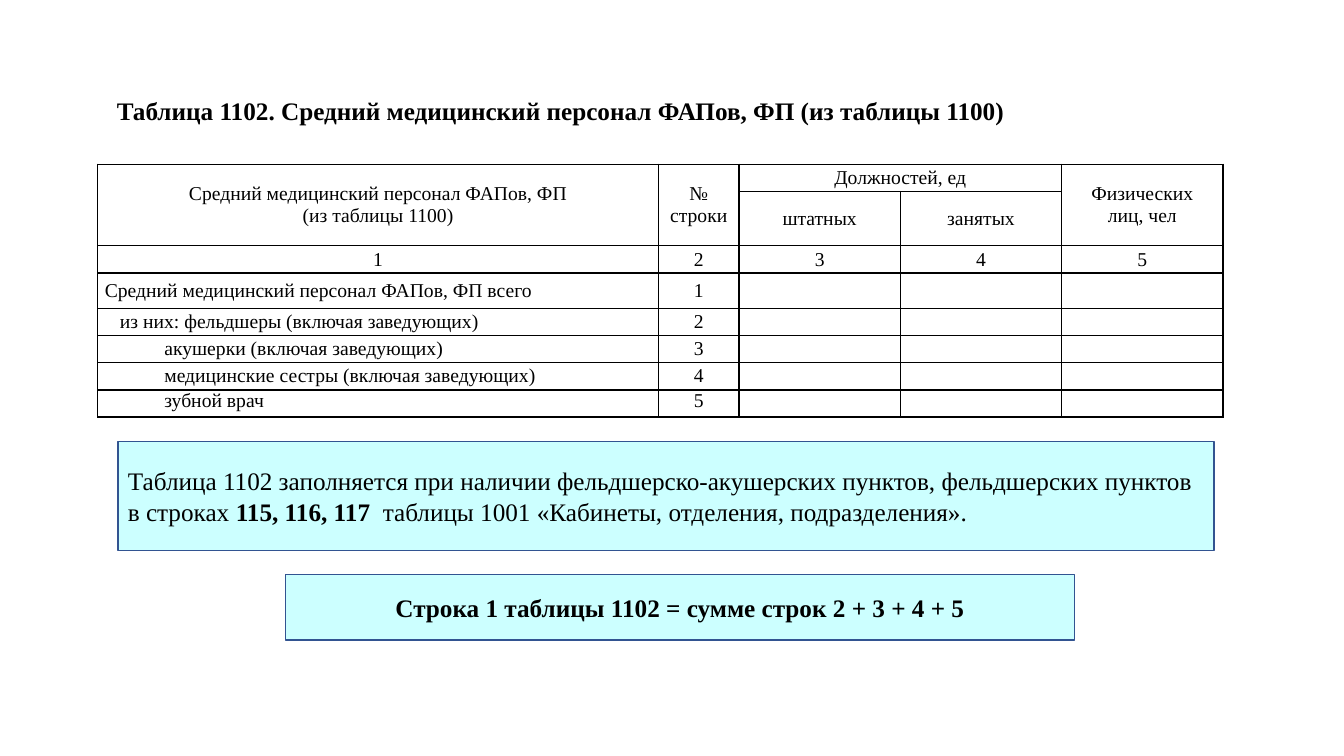
from lxml import etree
from pptx import Presentation
from pptx.dml.color import RGBColor
from pptx.enum.shapes import MSO_SHAPE
from pptx.enum.text import MSO_ANCHOR, PP_ALIGN
from pptx.oxml.ns import qn
from pptx.util import Emu, Pt

PX = 9144  # EMU; 100 px to the inch
FONT = "Times New Roman"
BLACK = RGBColor(0x00, 0x00, 0x00)
NOTE_FILL = RGBColor(0xCC, 0xFF, 0xFF)
NOTE_LINE = RGBColor(0x32, 0x54, 0x91)
RECTANGLE = MSO_SHAPE.RECTANGLE
MIDDLE = MSO_ANCHOR.MIDDLE
LEFT, CENTER = PP_ALIGN.LEFT, PP_ALIGN.CENTER

COLUMN_WIDTHS = [556, 80, 160, 160, 160]
ROW_HEIGHTS = [27, 54, 27, 35, 27, 27, 27, 27]
# (row, column, last row, last column, text)
HEADINGS = [
    (0, 0, 1, 0, "Средний медицинский персонал ФАПов, ФП\n(из таблицы 1100)"),
    (0, 1, 1, 1, "№\nстроки"),
    (0, 2, 0, 3, "Должностей, ед"),
    (0, 4, 1, 4, "Физических\nлиц, чел"),
    (1, 2, 1, 2, "штатных"),
    (1, 3, 1, 3, "занятых"),
]
NUMBER_ROW = 2
# (text, indent in px, line spacing in points)
STAFF = [
    ("Средний медицинский персонал ФАПов, ФП всего", 0, None),
    ("из них: фельдшеры (включая заведующих)", 15, None),
    ("акушерки (включая заведующих)", 59, None),
    ("медицинские сестры (включая заведующих)", 59, None),
    ("зубной врач", 59, 11),
]


def px(value):
    return Emu(value * PX)


def write_text(frame, text, size=18, bold=False, align=LEFT, indent=0, spacing=None):
    """Write one paragraph per line; every second part between ** marks is bold."""
    for index, line in enumerate(text.split("\n")):
        paragraph = frame.paragraphs[0] if index == 0 else frame.add_paragraph()
        paragraph.alignment = align
        if indent:
            properties = paragraph._p.get_or_add_pPr()
            properties.set("marL", str(px(indent)))
            properties.set("indent", "0")
        if spacing:
            paragraph.line_spacing = Pt(spacing)
        for part_index, part in enumerate(line.split("**")):
            run = paragraph.add_run()
            run.text = part
            run.font.name = FONT
            run.font.size = Pt(size)
            run.font.bold = bold or part_index % 2 == 1
            run.font.color.rgb = BLACK


def add_title(slide, left, top, width, height, text):
    frame = slide.shapes.add_textbox(px(left), px(top), px(width), px(height)).text_frame
    frame.word_wrap = True
    write_text(frame, text, bold=True)


def add_note(slide, left, top, width, height, text, **text_format):
    shape = slide.shapes.add_shape(RECTANGLE, px(left), px(top), px(width), px(height))
    shape.shadow.inherit = False
    shape.fill.solid()
    shape.fill.fore_color.rgb = NOTE_FILL
    shape.line.color.rgb = NOTE_LINE
    shape.line.width = Pt(1)
    shape.text_frame.word_wrap = True
    shape.text_frame.vertical_anchor = MIDDLE
    write_text(shape.text_frame, text, **text_format)


def style_cell(cell):
    cell.margin_left = cell.margin_right = px(7)
    cell.margin_top = cell.margin_bottom = 0
    cell.vertical_anchor = MIDDLE
    properties = cell._tc.get_or_add_tcPr()
    for side in ("lnL", "lnR", "lnT", "lnB"):
        border = etree.SubElement(properties, qn(f"a:{side}"), w=str(Pt(1)))
        fill = etree.SubElement(border, qn("a:solidFill"))
        etree.SubElement(fill, qn("a:srgbClr"), val=str(BLACK))
    cell.fill.background()
    # Keeps empty cells from stretching their rows
    ending = cell.text_frame.paragraphs[0]._p.get_or_add_endParaRPr()
    ending.set("sz", "1400")


def add_staff_table(slide, left, top):
    table = slide.shapes.add_table(
        len(ROW_HEIGHTS), len(COLUMN_WIDTHS), px(left), px(top),
        px(sum(COLUMN_WIDTHS)), px(sum(ROW_HEIGHTS))).table
    table.first_row = table.horz_banding = False
    for column, width in zip(table.columns, COLUMN_WIDTHS):
        column.width = px(width)
    for row, height in zip(table.rows, ROW_HEIGHTS):
        row.height = px(height)
    for cell in table.iter_cells():
        style_cell(cell)

    def write_cell(row, column, text, **text_format):
        write_text(table.cell(row, column).text_frame, text, size=14, **text_format)

    for row, column, last_row, last_column, text in HEADINGS:
        if (row, column) != (last_row, last_column):
            table.cell(row, column).merge(table.cell(last_row, last_column))
        write_cell(row, column, text, align=CENTER)
    for column in range(len(COLUMN_WIDTHS)):
        write_cell(NUMBER_ROW, column, str(column + 1), align=CENTER)
    for number, (text, indent, spacing) in enumerate(STAFF, start=1):
        row = NUMBER_ROW + number
        write_cell(row, 0, text, indent=indent, spacing=spacing)
        write_cell(row, 1, str(number), align=CENTER, spacing=spacing)


def main():
    presentation = Presentation()
    presentation.slide_width, presentation.slide_height = px(1333), px(750)
    slide = presentation.slides.add_slide(presentation.slide_layouts[6])
    add_title(slide, 106, 90, 1132, 40,
              "Таблица 1102. Средний медицинский персонал ФАПов, ФП (из таблицы 1100)")
    add_staff_table(slide, 97, 163)
    add_note(slide, 117, 438, 1087, 108,
             "Таблица 1102 заполняется при наличии фельдшерско-акушерских пунктов, "
             "фельдшерских пунктов в строках **115, 116, 117  **"
             "таблицы 1001 «Кабинеты, отделения, подразделения».")
    add_note(slide, 283, 570, 783, 65,
             "Строка 1 таблицы 1102 = сумме строк 2 + 3 + 4 + 5", bold=True, align=CENTER)
    presentation.save("out.pptx")


if __name__ == "__main__":
    main()
